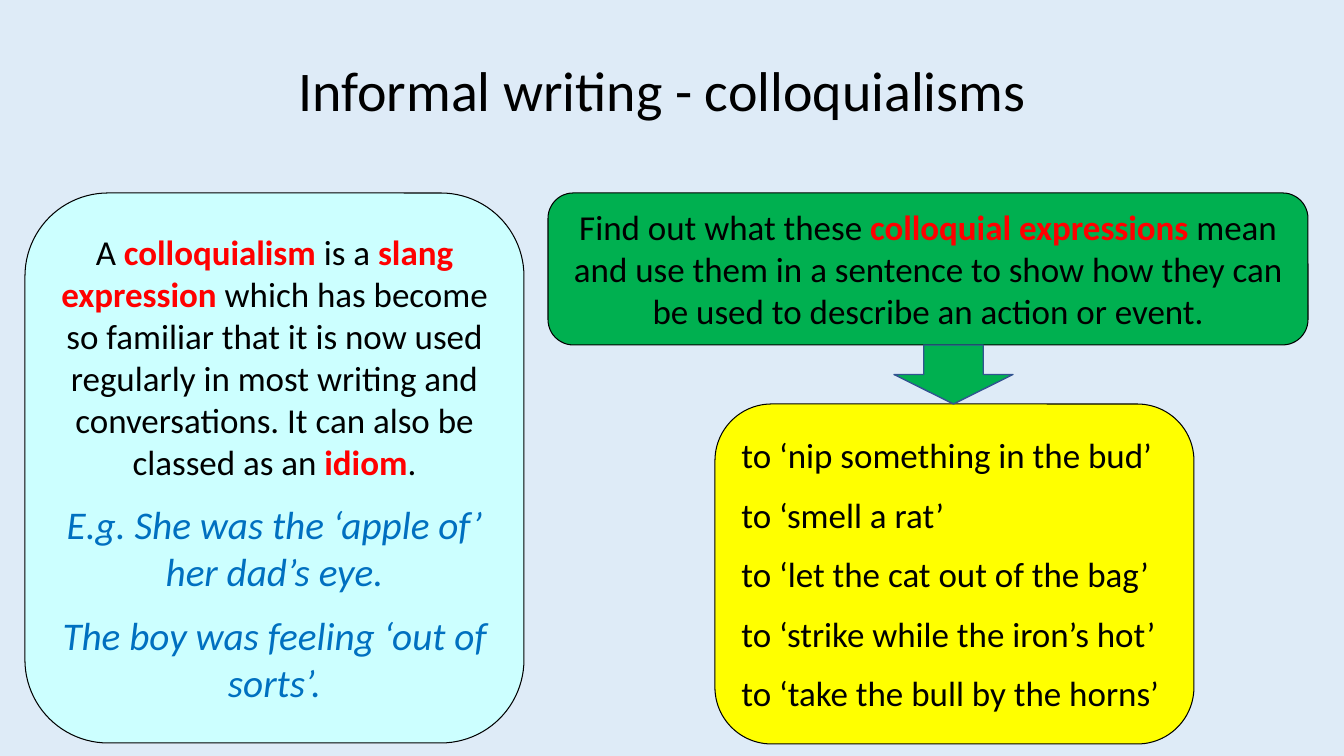
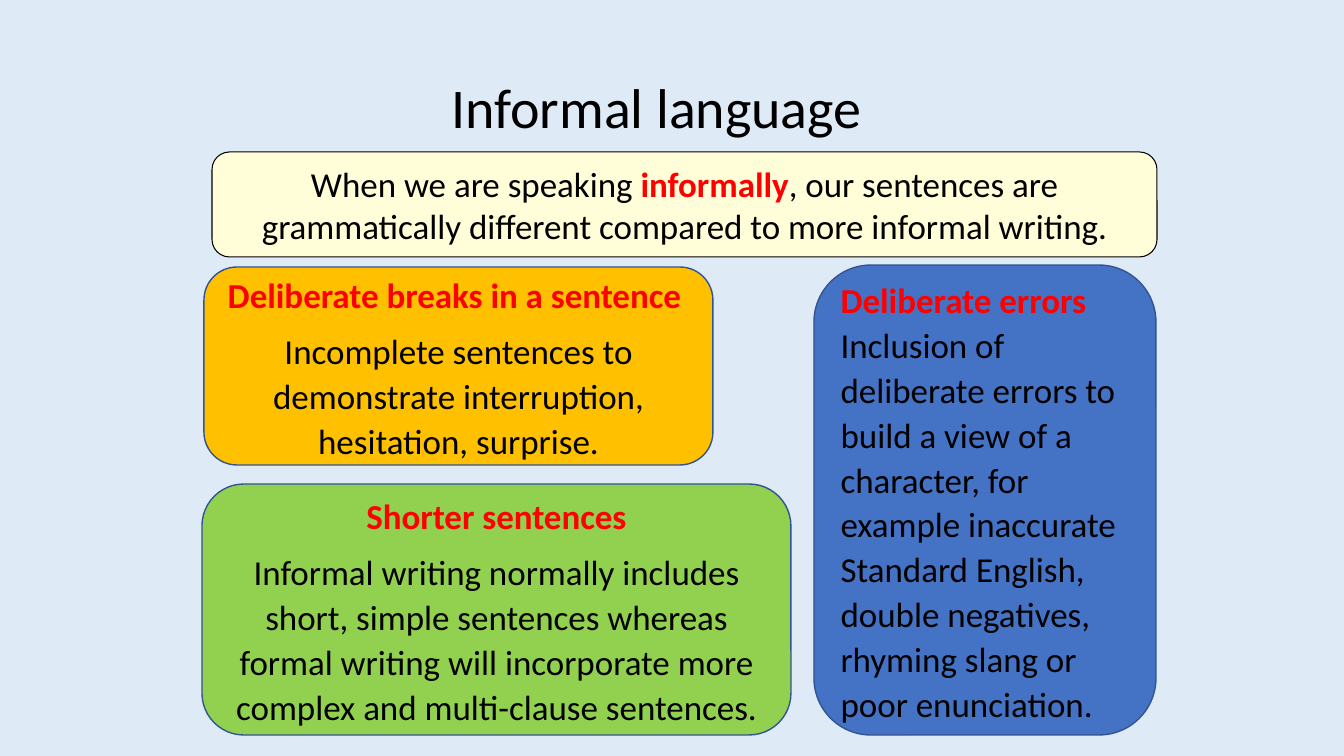
from dataclasses import dataclass

from pptx import Presentation
from pptx.dml.color import RGBColor
from pptx.enum.shapes import MSO_SHAPE as Preset
from pptx.enum.text import MSO_ANCHOR as Anchor, PP_ALIGN as Align
from pptx.shapes.autoshape import Shape
from pptx.slide import Slide
from pptx.text.text import TextFrame
from pptx.util import Emu, Pt

# Shared look
EMU_PER_PX = 914400 / 100.8
FONT = "Calibri"
BACKGROUND = "DEEBF7"
BLACK, RED, BLUE, GREEN = "000000", "FF0000", "0070C0", "00B050"
OUTLINE = "325491"


@dataclass(frozen=True)
class Spacing:
    """Distances in points; lines is a multiple of the line height."""
    before: float = 0
    after: float = 0
    lines: float = 1


LOOSE = Spacing(before=12.5)
PROSE = Spacing(after=8, lines=1.07)


@dataclass(frozen=True)
class Text:
    """One paragraph; words between asterisks are bold and red."""
    words: str
    size: int = 25
    color: str = BLACK
    italic: bool = False


@dataclass(frozen=True)
class Panel:
    left: int
    top: int
    width: int
    height: int
    fill: str
    texts: tuple[Text, ...] = ()
    line: str = BLACK
    line_width: float = 0.75
    align: Align = Align.CENTER
    spacing: Spacing = LOOSE
    preset: Preset = Preset.ROUNDED_RECTANGLE


def px(length: int) -> Emu:
    return Emu(round(length * EMU_PER_PX))


def rgb(color: str) -> RGBColor:
    return RGBColor.from_string(color)


def write(frame: TextFrame, texts: tuple[Text, ...], align: Align, spacing: Spacing) -> None:
    frame.word_wrap = True
    for index, text in enumerate(texts):
        paragraph = frame.add_paragraph() if index else frame.paragraphs[0]
        paragraph.alignment = align
        paragraph.line_spacing = spacing.lines
        paragraph.space_before = Pt(spacing.before if index else 0)
        paragraph.space_after = Pt(spacing.after)
        font = paragraph.font
        font.name, font.size, font.italic = FONT, Pt(text.size), text.italic
        font.color.rgb = rgb(text.color)
        for position, words in enumerate(text.words.split("*")):
            if not words:
                continue
            run = paragraph.add_run()
            run.text = words
            if position % 2:
                run.font.bold = True
                run.font.color.rgb = rgb(RED)


def add_panel(slide: Slide, panel: Panel) -> Shape:
    shape = slide.shapes.add_shape(
        panel.preset, px(panel.left), px(panel.top), px(panel.width), px(panel.height))
    shape.shadow.inherit = False
    shape.fill.solid()
    shape.fill.fore_color.rgb = rgb(panel.fill)
    shape.line.color.rgb = rgb(panel.line)
    shape.line.width = Pt(panel.line_width)
    if panel.texts:
        shape.text_frame.vertical_anchor = Anchor.MIDDLE
        write(shape.text_frame, panel.texts, panel.align, panel.spacing)
    return shape


def add_title(slide: Slide, title: str, left: int, top: int, width: int) -> None:
    box = slide.shapes.add_textbox(px(left), px(top), px(width), px(165))
    frame = box.text_frame
    frame.vertical_anchor = Anchor.BOTTOM
    frame.margin_bottom = 0
    write(frame, (Text(title, size=40),), Align.CENTER, Spacing())


def add_slide(presentation: Presentation, panels: tuple[Panel, ...],
              title: str, left: int, top: int, width: int) -> None:
    slide = presentation.slides.add_slide(presentation.slide_layouts[6])
    slide.background.fill.solid()
    slide.background.fill.fore_color.rgb = rgb(BACKGROUND)
    add_title(slide, title, left, top, width)
    for panel in panels:
        add_panel(slide, panel)


# Slide 1: definition, task and expressions
EXPRESSIONS = (
    "nip something in the bud",
    "smell a rat",
    "let the cat out of the bag",
    "strike while the iron’s hot",
    "take the bull by the horns",
)
COLLOQUIALISMS = (
    Panel(25, 193, 499, 550, "CCFFFF", (
        Text("A *colloquialism* is a *slang expression* which has become so familiar that "
             "it is now used regularly in most writing and conversations. It can also be "
             "classed as an *idiom*."),
        Text("E.g. She was the ‘apple of’ her dad’s eye.", 28, BLUE, True),
        Text("The boy was feeling ‘out of sorts’.", 28, BLUE, True),
    )),
    Panel(548, 193, 760, 152, GREEN, (
        Text("Find out what these *colloquial expressions *mean and use them in a sentence "
             "to show how they can be used to describe an action or event."),
    )),
    Panel(715, 404, 479, 340, "FFFF00",
          tuple(Text(f"to ‘{expression}’") for expression in EXPRESSIONS), align=Align.LEFT),
    Panel(894, 345, 119, 59, GREEN, line=OUTLINE, line_width=1, preset=Preset.DOWN_ARROW),
)


# Slide 2: features of informal language
def feature(left: int, top: int, width: int, height: int, fill: str,
            *words: str, align: Align = Align.CENTER) -> Panel:
    return Panel(left, top, width, height, fill, tuple(Text(part) for part in words),
                 OUTLINE, 1, align, PROSE)


INFORMAL_LANGUAGE = (
    Panel(212, 152, 945, 105, "FFFED8", (
        Text("When we are speaking* informally*, our sentences are grammatically different "
             "compared to more informal writing."),
    )),
    feature(204, 267, 509, 198, "FFC000",
            "*Deliberate breaks in a sentence *",
            "Incomplete sentences to demonstrate interruption, hesitation, surprise."),
    feature(814, 265, 342, 470, "4472C4",
            "*Deliberate errors* Inclusion of deliberate errors to build a view of a "
            "character, for example inaccurate Standard English, double negatives, "
            "rhyming slang or poor enunciation.", align=Align.LEFT),
    feature(202, 484, 589, 251, "92D050",
            "*Shorter sentences*",
            "Informal writing normally includes short, simple sentences whereas formal "
            "writing will incorporate more complex and multi-clause sentences."),
)


def main() -> None:
    presentation = Presentation()
    presentation.slide_width, presentation.slide_height = px(1344), px(756)
    add_slide(presentation, COLLOQUIALISMS, "Informal writing - colloquialisms", 234, -42, 856)
    add_slide(presentation, INFORMAL_LANGUAGE, "Informal language", 299, -25, 715)
    presentation.save("out.pptx")


if __name__ == "__main__":
    main()
